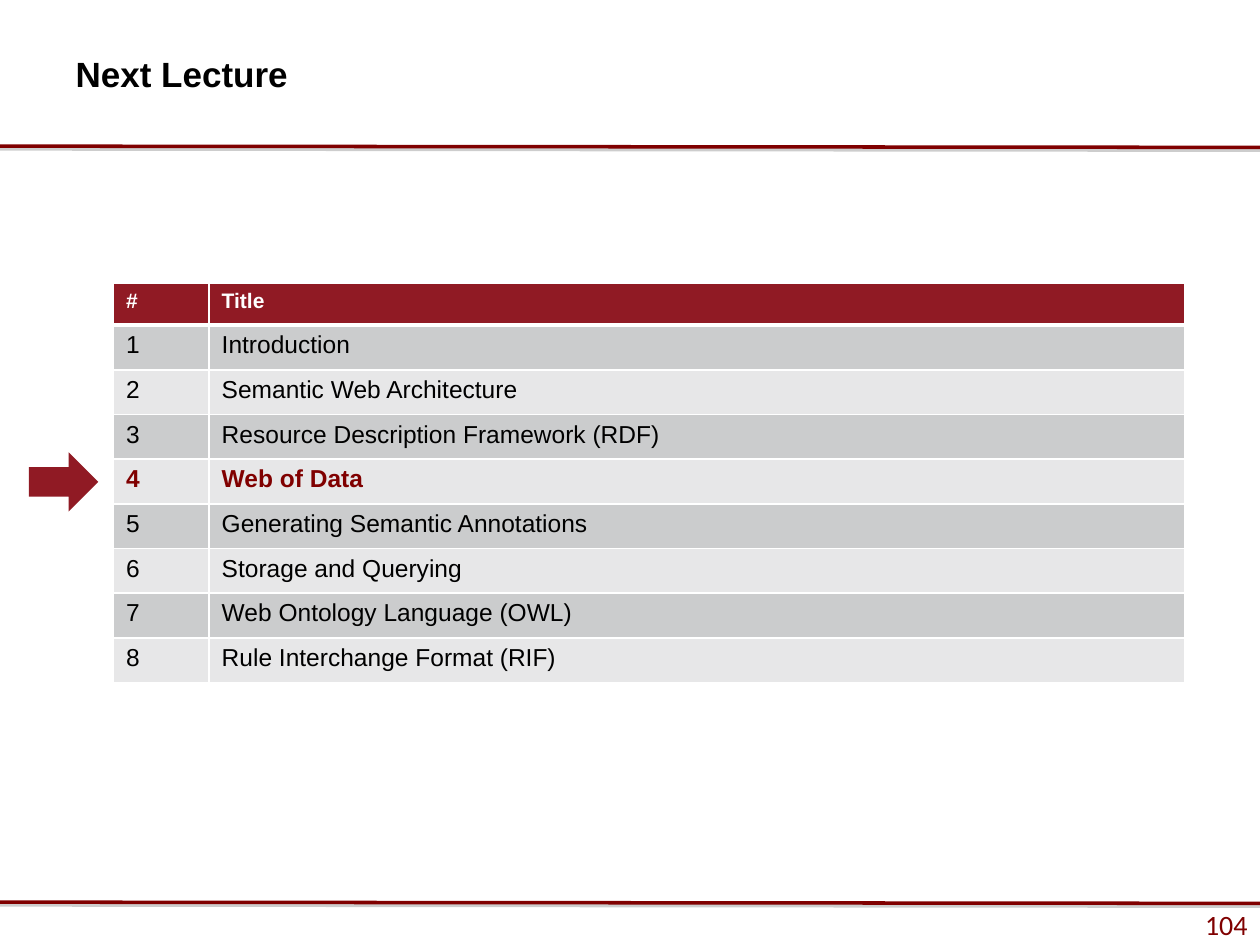
import dataclasses

import pptx
import pptx.dml.color
import pptx.enum.shapes
import pptx.enum.text
import pptx.oxml
import pptx.oxml.ns
import pptx.util
from pptx.util import Inches


@dataclasses.dataclass(frozen=True)
class Theme:
    white: str = "FFFFFF"
    black: str = "000000"
    maroon: str = "800000"
    crimson: str = "901A24"
    bands: tuple = ("CBCCCD", "E7E7E8")
    shadow: str = "808080"
    font: str = "Arial"
    number_font: str = "Calibri"
    title_size: int = 20
    number_size: int = 16
    header_size: int = 12
    body_size: int = 14


THEME = Theme()
LECTURES = (
    "Introduction",
    "Semantic Web Architecture",
    "Resource Description Framework (RDF)",
    "Web of Data",
    "Generating Semantic Annotations",
    "Storage and Querying",
    "Web Ontology Language (OWL)",
    "Rule Interchange Format (RIF)",
)
NEXT_LECTURE = 4


def rgb(color):
    return pptx.dml.color.RGBColor.from_string(color)


def write(frame, text, size, color, bold=False, font=THEME.font):
    """Add one formatted run to the first paragraph and return the paragraph."""
    para = frame.paragraphs[0]
    span = para.add_run()
    span.text = text
    span.font.name = font
    span.font.size = pptx.util.Pt(size)
    span.font.bold = bold
    span.font.color.rgb = rgb(color)
    return para


def add_plain_shape(page, kind, left, top, width, height, fill):
    shape = page.shapes.add_shape(
        kind, Inches(left), Inches(top), Inches(width), Inches(height))
    shape.shadow.inherit = False
    shape.fill.solid()
    shape.fill.fore_color.rgb = rgb(fill)
    shape.line.fill.background()
    return shape


def add_title(page, text):
    title = page.shapes.title
    title.left, title.top = Inches(0.5), Inches(0.33)
    title.width, title.height = Inches(6.33), Inches(0.5)
    frame = title.text_frame
    frame.word_wrap = True
    frame.vertical_anchor = pptx.enum.text.MSO_ANCHOR.MIDDLE
    para = write(frame, text, THEME.title_size, THEME.black, bold=True)
    para.alignment = pptx.enum.text.PP_ALIGN.LEFT


def add_page_number(page, number):
    box = add_plain_shape(page, pptx.enum.shapes.MSO_SHAPE.RECTANGLE,
                          0, 7.21, 10, 0.25, THEME.white)
    frame = box.text_frame
    frame.vertical_anchor = pptx.enum.text.MSO_ANCHOR.MIDDLE
    para = write(frame, number, THEME.number_size, THEME.maroon,
                 font=THEME.number_font)
    para.alignment = pptx.enum.text.PP_ALIGN.RIGHT


def add_rule(page, top):
    """Draw a full-width line with a soft shadow below it."""
    rule = page.shapes.add_connector(
        pptx.enum.shapes.MSO_CONNECTOR.STRAIGHT,
        0, Inches(top), Inches(10), Inches(top + 0.01))
    rule.line.color.rgb = rgb(THEME.maroon)
    rule.line.width = pptx.util.Pt(2)
    rule._element.spPr.append(pptx.oxml.parse_xml(
        f'<a:effectLst {pptx.oxml.ns.nsdecls("a")}>'
        f'<a:outerShdw blurRad="0" dist="{pptx.util.Pt(1.6)}" dir="5400000"'
        f' rotWithShape="0"><a:srgbClr val="{THEME.shadow}">'
        '<a:alpha val="38000"/></a:srgbClr></a:outerShdw></a:effectLst>'))


def set_borders(cell, **widths):
    """Draw white borders; widths in points are keyed L, R, T and B."""
    properties = cell._tc.get_or_add_tcPr()
    for side, width in widths.items():
        properties.append(pptx.oxml.parse_xml(
            f'<a:ln{side} {pptx.oxml.ns.nsdecls("a")} w="{pptx.util.Pt(width)}">'
            f'<a:solidFill><a:srgbClr val="{THEME.white}"/></a:solidFill>'
            f'</a:ln{side}>'))


def fill_row(table, index, texts, fill, size, color, bold):
    top = 3 if index == 1 else 1
    bottom = 3 if index == 0 else 1
    for column, text in enumerate(texts):
        cell = table.cell(index, column)
        set_borders(cell, L=1, R=1, T=top, B=bottom)
        cell.fill.solid()
        cell.fill.fore_color.rgb = rgb(fill)
        write(cell.text_frame, text, size, color, bold)


def add_lecture_table(page):
    height, header_height = 3.17, 0.33
    table = page.shapes.add_table(
        len(LECTURES) + 1, 2, Inches(0.9), Inches(2.25),
        Inches(8.5), Inches(height)).table
    table.horz_banding = False
    for column, width in zip(table.columns, (0.76, 7.74)):
        column.width = Inches(width)
    for row in table.rows:
        row.height = Inches((height - header_height) / len(LECTURES))
    table.rows[0].height = Inches(header_height)

    fill_row(table, 0, ("#", "Title"), THEME.crimson,
             THEME.header_size, THEME.white, bold=True)
    for number, lecture in enumerate(LECTURES, start=1):
        is_next = number == NEXT_LECTURE
        fill_row(table, number, (str(number), lecture),
                 THEME.bands[(number - 1) % 2], THEME.body_size,
                 THEME.maroon if is_next else THEME.black, bold=is_next)


def main():
    deck = pptx.Presentation()
    deck.slide_width, deck.slide_height = Inches(10), Inches(7.5)
    page = deck.slides.add_slide(deck.slide_layouts.get_by_name("Title Only"))
    add_page_number(page, "104")
    for top in (1.16, 7.16):
        add_rule(page, top)
    add_title(page, "Next Lecture")
    add_lecture_table(page)
    add_plain_shape(page, pptx.enum.shapes.MSO_SHAPE.RIGHT_ARROW,
                    0.23, 3.59, 0.55, 0.47, THEME.crimson)
    deck.save("out.pptx")


if __name__ == "__main__":
    main()
